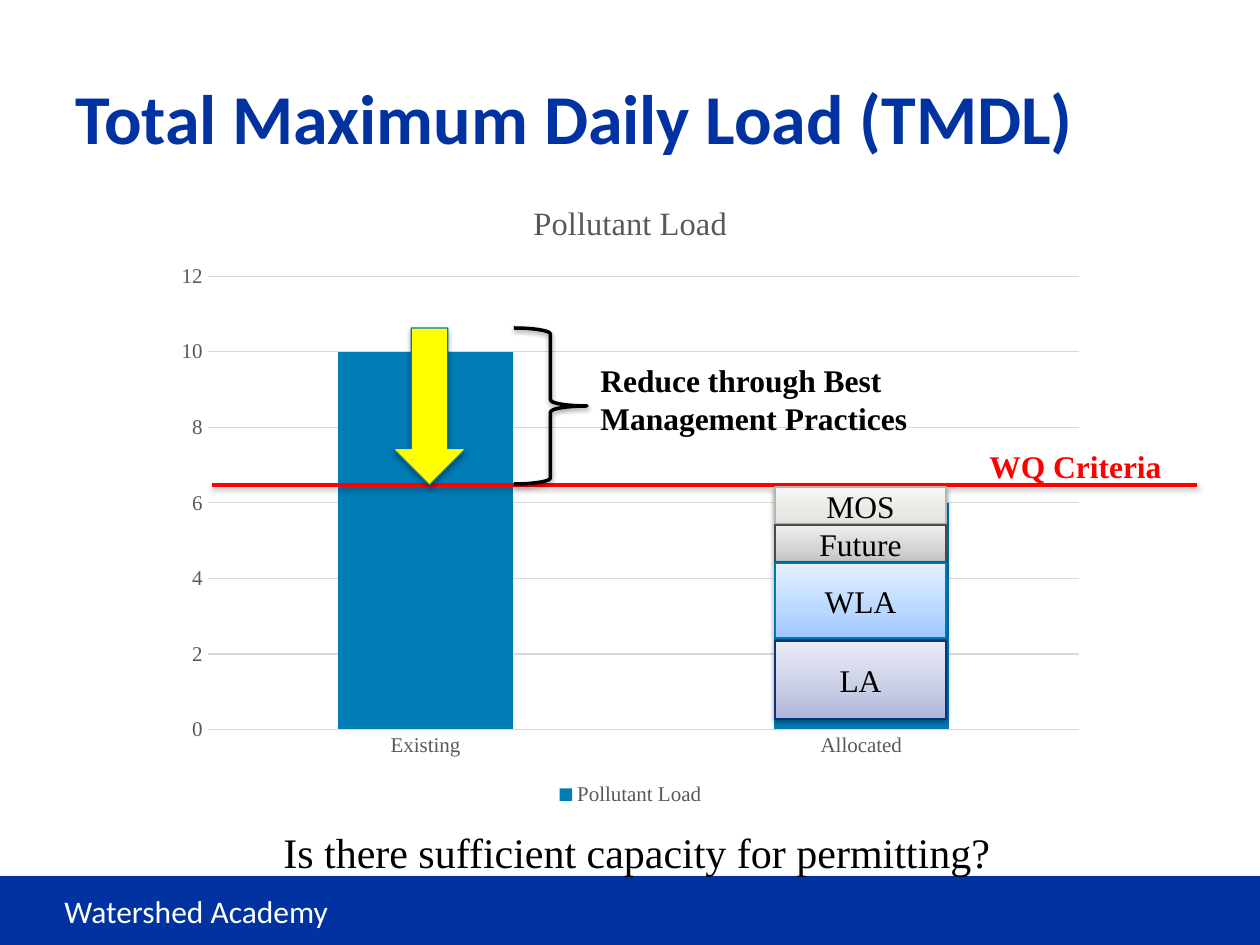
from copy import deepcopy

from pptx import Presentation, util as u
from pptx.chart.data import CategoryChartData
from pptx.dml.color import RGBColor
from pptx.enum import chart as charts, shapes, text
from pptx.oxml import parse_xml
from pptx.oxml.ns import nsdecls, qn

PX = 914400 / 126
NAVY = RGBColor(0x00, 0x32, 0xA1)
BAND = RGBColor(0x00, 0x33, 0xA1)
BAR = RGBColor(0x00, 0x7C, 0xB7)
EDGE = RGBColor(0x00, 0x79, 0xB3)
GRAY = RGBColor(0x59, 0x59, 0x59)
GRID = RGBColor(0xD9, 0xD9, 0xD9)
RED = RGBColor(0xFF, 0x00, 0x00)
YELLOW = RGBColor(0xFF, 0xFF, 0x00)
BLACK = RGBColor(0x00, 0x00, 0x00)
WHITE = RGBColor(0xFF, 0xFF, 0xFF)
SERIF = "Times New Roman"
SANS = "Calibri"


def emu(*lengths):
    """Turn px lengths into EMU."""
    return [round(length * PX) for length in lengths]


def apply(target, formats):
    """Set each attribute of a format dict on the target."""
    for name, value in formats.items():
        setattr(target, name, value)


def style_font(font, size, color=BLACK, name=SERIF, bold=False):
    """Give a font its size, colour, face and weight."""
    apply(font, {"size": u.Pt(size), "name": name, "bold": bold})
    font.color.rgb = color


def style_line(line, color, width=0.75):
    """Draw a line in a solid colour."""
    line.color.rgb = color
    line.width = u.Pt(width)


def add_shadow(shape, opacity=38, distance=20000):
    """Put a soft shadow straight below a shape or connector."""
    properties = shape._element.spPr
    if properties.find(qn("a:effectLst")) is None:
        properties.append(parse_xml(f"<a:effectLst {nsdecls('a')}/>"))
    properties.find(qn("a:effectLst")).append(parse_xml(
        f'<a:outerShdw {nsdecls("a")} blurRad="40000" dist="{distance}" dir="5400000" rotWithShape="0">'
        f'<a:srgbClr val="000000"><a:alpha val="{opacity}000"/></a:srgbClr></a:outerShdw>'))


def add_shape(slide, kind, box, fill, line, width=0.75, opacity=38, distance=20000):
    """Add a preset shape with an optional solid fill and a shadow."""
    shape = slide.shapes.add_shape(kind, *emu(*box))
    shape.shadow.inherit = False
    if fill is None:
        shape.fill.background()
    else:
        shape.fill.solid()
        shape.fill.fore_color.rgb = fill
    style_line(shape.line, line, width)
    add_shadow(shape, opacity, distance)
    return shape


def fill_gradient(shape, colors):
    """Blend three colours from the bottom of a shape to its top."""
    shape.fill.gradient()
    shape.fill.gradient_angle = 90
    stops = shape._element.spPr.find(qn("a:gradFill")).find(qn("a:gsLst"))
    stops.insert(1, deepcopy(stops[0]))
    for stop, position, color in zip(shape.fill.gradient_stops, (0, 0.35, 1), colors):
        stop.position = position
        stop.color.rgb = RGBColor.from_string(color)


def add_text(slide, box, words, size, color=BLACK, name=SERIF, bold=False):
    """Add a wrapping text box."""
    frame = slide.shapes.add_textbox(*emu(*box)).text_frame
    apply(frame, {"word_wrap": True, "text": words})
    style_font(frame.paragraphs[0].runs[0].font, size, color, name, bold)


def build_title(slide, box):
    """Place the slide title."""
    title = slide.shapes.title
    apply(title, dict(zip(("left", "top", "width", "height"), emu(*box))))
    frame = title.text_frame
    apply(frame, {"text": "Total Maximum Daily Load (TMDL)", "word_wrap": True,
                  "vertical_anchor": text.MSO_ANCHOR.MIDDLE})
    paragraph = frame.paragraphs[0]
    paragraph.alignment = text.PP_ALIGN.LEFT
    style_font(paragraph.runs[0].font, 40, NAVY, SANS, True)


def build_footer(slide, box):
    """Draw the footer band and its label."""
    left, top, width, height = box
    add_shape(slide, shapes.MSO_SHAPE.RECTANGLE, box, BAND, NAVY, opacity=35, distance=23000)
    add_text(slide, (left + 52, top + 9, 423, 52), "Watershed Academy", 18, WHITE, SANS)


def build_chart(slide, box):
    """Add the pollutant load column chart."""
    data = CategoryChartData()
    data.categories = ["Existing", "Allocated"]
    data.add_series("Pollutant Load", (10, 6))
    chart = slide.shapes.add_chart(charts.XL_CHART_TYPE.COLUMN_STACKED, *emu(*box), data).chart
    style_font(chart.font, 10)
    chart.has_title = True
    title = chart.chart_title
    title.include_in_layout = False
    title.text_frame.text = "Pollutant Load"
    style_font(title.text_frame.paragraphs[0].runs[0].font, 18.6, GRAY)
    chart.has_legend = True
    apply(chart.legend, {"position": charts.XL_LEGEND_POSITION.BOTTOM, "include_in_layout": False})
    style_font(chart.legend.font, 12, GRAY)
    plot = chart.plots[0]
    apply(plot, {"gap_width": 150, "overlap": 100, "vary_by_categories": False})
    series = plot.series[0]
    series.format.fill.solid()
    series.format.fill.fore_color.rgb = BAR
    for axis in (chart.category_axis, chart.value_axis):
        apply(axis, {"major_tick_mark": charts.XL_TICK_MARK.NONE,
                     "minor_tick_mark": charts.XL_TICK_MARK.NONE})
        style_font(axis.tick_labels.font, 12, GRAY)
    style_line(chart.category_axis.format.line, GRID)
    apply(chart.value_axis, {"minimum_scale": 0, "maximum_scale": 12, "major_unit": 2,
                             "has_major_gridlines": True})
    chart.value_axis.format.line.fill.background()
    style_line(chart.value_axis.major_gridlines.format.line, GRID)


def build_criteria(slide, box):
    """Draw the water quality limit along the bottom of the box, with its label."""
    left, top, width, height = box
    bottom = top + height
    limit = slide.shapes.add_connector(
        shapes.MSO_CONNECTOR.STRAIGHT, *emu(left, bottom, left + width, bottom))
    style_line(limit.line, RED, 2)
    add_shadow(limit)
    add_text(slide, (left + 765, top, 199, 50), "WQ Criteria", 18, RED, bold=True)


def build_reduction(slide, box):
    """Draw the reduction arrow, its brace and the explanation."""
    left, top, width, height = box
    add_shape(slide, shapes.MSO_SHAPE.DOWN_ARROW, (left, top, 73, height), YELLOW, EDGE,
              opacity=35, distance=23000)
    add_shape(slide, shapes.MSO_SHAPE.RIGHT_BRACE, (left + 121, top, 73, height - 1), None, BLACK, 2)
    add_text(slide, (left + 195, top + 27, width - 195, 89),
             "Reduce through Best Management Practices", 18, bold=True)


def build_allocation(slide, box):
    """Stack the parts of the allocated load from top to bottom."""
    left, top, width, height = box
    parts = [
        ("MOS", 0, 37, "B4B6AF", ("E0E3DB", "E9EAE5", "F6F7F5")),
        ("Future", 38, 37, "484B4B", ("C1C2C2", "D3D4D4", "EFEFEF")),
        ("WLA", 76, 75, "0079B3", ("9CC7FF", "B9D7FF", "E5EFFF")),
        ("LA", 154, height - 154, "09357B", ("AEB5DA", "C7CCE4", "E9EBF5")),
    ]
    for label, offset, part_height, line, colors in parts:
        part = add_shape(slide, shapes.MSO_SHAPE.RECTANGLE, (left, top + offset, width, part_height),
                         None, RGBColor.from_string(line))
        fill_gradient(part, colors)
        frame = part.text_frame
        apply(frame, {"text": label, "vertical_anchor": text.MSO_ANCHOR.MIDDLE})
        paragraph = frame.paragraphs[0]
        paragraph.alignment = text.PP_ALIGN.CENTER
        style_font(paragraph.runs[0].font, 18)


def main():
    """Build the slide and save it."""
    presentation = Presentation()
    presentation.slide_width, presentation.slide_height = emu(1260, 945)
    slide = presentation.slides.add_slide(presentation.slide_layouts[5])
    build_footer(slide, (0, 877, 1260, 67))
    build_title(slide, (63, 38, 1134, 158))
    build_chart(slide, (163, 178, 935, 633))
    build_criteria(slide, (212, 441, 985, 44))
    build_reduction(slide, (393, 328, 555, 157))
    build_allocation(slide, (775, 487, 171, 232))
    add_text(slide, (271, 820, 905, 63), "Is there sufficient capacity for permitting?", 24)
    presentation.save("out.pptx")


if __name__ == "__main__":
    main()
